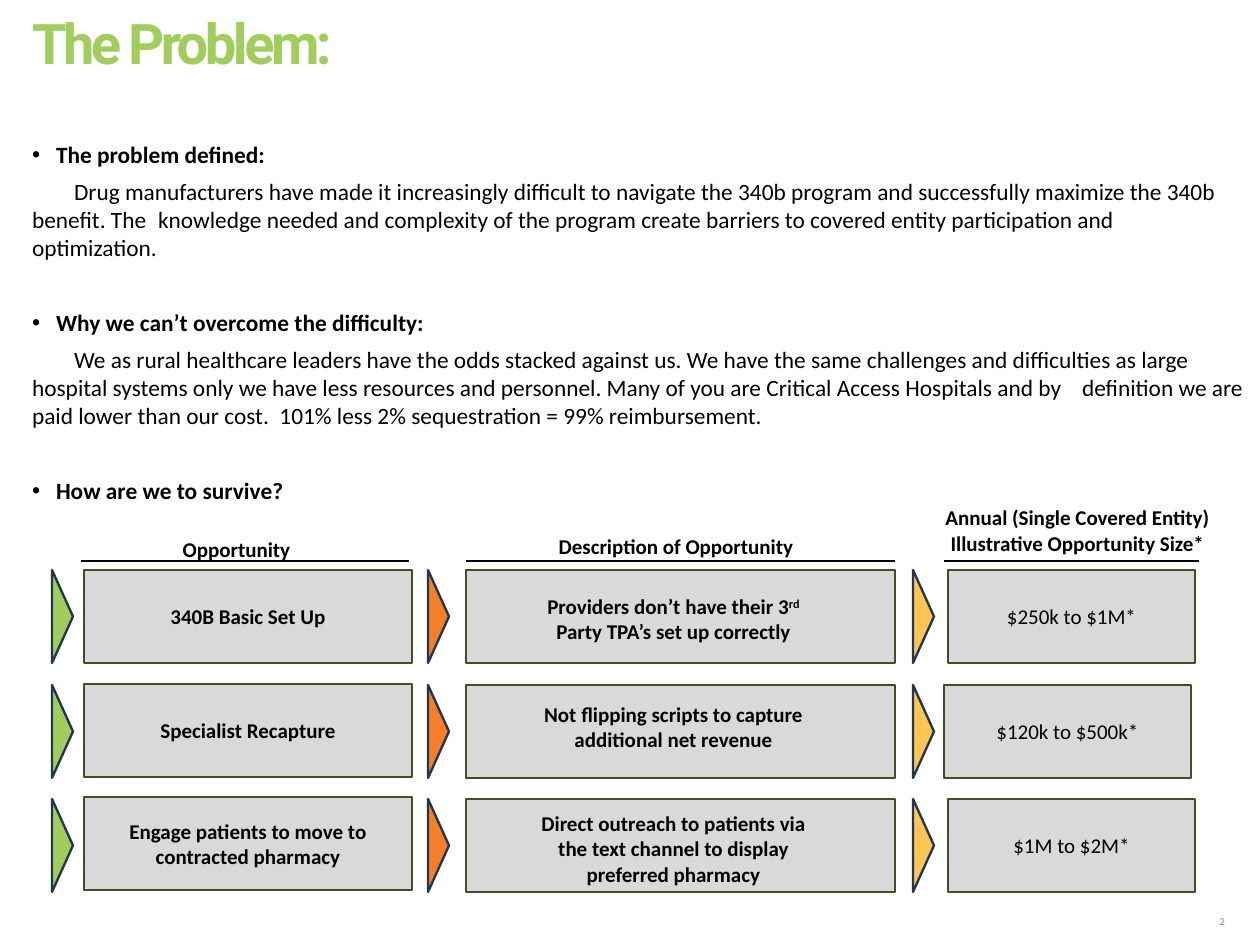
import pptx
import pptx.util
import pptx.dml.color
import pptx.enum.shapes
import pptx.enum.text
import pptx.oxml
import pptx.oxml.ns

SCALE = 914400 / 84
COLORS = {
    "black": "000000", "green": "A0CD5B", "orange": "F57F28", "yellow": "FEC553",
    "navy": "213650", "olive": "414F26", "gray": "D9D9D9", "number": "888888",
}
ALIGN = pptx.enum.text.PP_ALIGN
ANCHOR = pptx.enum.text.MSO_ANCHOR
SHAPES = pptx.enum.shapes.MSO_SHAPE


def px(value):
    return pptx.util.Emu(round(value * SCALE))


def rgb(name):
    return pptx.dml.color.RGBColor.from_string(COLORS[name])


def xml(tag, **attributes):
    element = pptx.oxml.parse_xml(f"<a:{tag} {pptx.oxml.ns.nsdecls('a')}/>")
    for name, value in attributes.items():
        element.set(name, str(value))
    return element


def write(paragraph, text, size=18, font="Calibri", color="black", bold=True,
          align=ALIGN.CENTER, spacing=None, baseline=None):
    paragraph.alignment = align
    run = paragraph.add_run()
    run.text = text
    run.font.size = pptx.util.Pt(size)
    run.font.name = font
    run.font.bold = bold
    run.font.color.rgb = rgb(color)
    for name, value in (("spc", spacing), ("baseline", baseline)):
        if value is not None:
            run.font._element.set(name, str(value))


class SlideBuilder:
    def __init__(self, slide):
        self.slide = slide

    def place(self, shape, box):
        shape.left, shape.top, shape.width, shape.height = map(px, box)

    def frame(self, shape, anchor=ANCHOR.MIDDLE, insets=(4, 4, 4, 4), wrap=True):
        frame = shape.text_frame
        frame.auto_size = pptx.enum.text.MSO_AUTO_SIZE.NONE
        frame.word_wrap = wrap
        frame.vertical_anchor = anchor
        frame.margin_left, frame.margin_top, frame.margin_right, frame.margin_bottom = map(px, insets)
        return frame

    def title(self, text, box):
        shape = self.slide.shapes.title
        self.place(shape, box)
        write(self.frame(shape).paragraphs[0], text, size=48, font="Roboto",
              color="green", align=ALIGN.LEFT, spacing=-300)

    def body(self, sections, box):
        shape = self.slide.placeholders[1]
        self.place(shape, box)
        frame = self.frame(shape, ANCHOR.TOP)
        for index, (heading, detail) in enumerate(sections):
            paragraph = frame.add_paragraph() if index else frame.paragraphs[0]
            self.heading(paragraph, heading, 40 if index else 8)
            if detail:
                self.detail(frame.add_paragraph(), detail)

    def heading(self, paragraph, text, before):
        write(paragraph, text, size=20, align=ALIGN.LEFT)
        paragraph.space_before = pptx.util.Pt(before)
        properties = paragraph._p.get_or_add_pPr()
        properties.set("marL", str(px(24)))
        properties.set("indent", str(-px(24)))
        properties.append(xml("buFont", typeface="Arial"))
        properties.append(xml("buChar", char="•"))

    def detail(self, paragraph, text):
        write(paragraph, text, size=20, bold=False, align=ALIGN.LEFT)
        paragraph.space_before = pptx.util.Pt(8)
        properties = paragraph._p.get_or_add_pPr()
        properties.set("marL", "0")
        properties.set("indent", "0")
        properties.append(xml("buNone"))
        stops = xml("tabLst")
        for number in range(1, 20):
            stops.append(xml("tab", pos=px(63 * number), algn="l"))
        properties.append(stops)

    def label(self, lines, box, wrap=True, anchor=ANCHOR.TOP, **style):
        shape = self.slide.shapes.add_textbox(*map(px, box))
        frame = self.frame(shape, anchor, wrap=wrap)
        for index, line in enumerate(lines):
            write(frame.add_paragraph() if index else frame.paragraphs[0], line, **style)

    def rule(self, left, right, top):
        line = self.slide.shapes.add_connector(
            pptx.enum.shapes.MSO_CONNECTOR.STRAIGHT, px(left), px(top), px(right), px(top))
        line.line.color.rgb = rgb("black")
        line.line.width = pptx.util.Pt(1.5)
        line._element.spPr.append(xml("effectLst"))

    def shape(self, kind, box, fill, outline):
        shape = self.slide.shapes.add_shape(kind, *map(px, box))
        shape.shadow.inherit = False
        shape.fill.solid()
        shape.fill.fore_color.rgb = rgb(fill)
        shape.line.color.rgb = rgb(outline)
        shape.line.width = pptx.util.Pt(2)
        return shape

    def arrow(self, center, middle, color):
        shape = self.shape(SHAPES.ISOSCELES_TRIANGLE, (center - 46, middle - 10, 93, 21), color, "navy")
        shape.rotation = 90

    def card(self, runs, box, insets, bold=True):
        shape = self.shape(SHAPES.RECTANGLE, box, "gray", "olive")
        paragraph = self.frame(shape, insets=insets).paragraphs[0]
        for text, baseline in runs:
            write(paragraph, text, bold=bold, baseline=baseline)


SECTIONS = [
    ("The problem defined:",
     "\tDrug manufacturers have made it increasingly difficult to navigate the 340b program and "
     "successfully maximize the 340b \tbenefit. The \tknowledge needed and complexity of the program "
     "create barriers to covered entity participation and \toptimization."),
    ("Why we can’t overcome the difficulty:",
     "\tWe as rural healthcare leaders have the odds stacked against us. We have the same challenges "
     "and difficulties as large \thospital systems only we have less resources and personnel. Many of "
     "you are Critical Access Hospitals and by \tdefinition we are paid lower than our cost.  "
     "101% less 2% sequestration = 99% reimbursement."),
    ("How are we to survive?", None),
]
HEADERS = [
    (["Opportunity"], (165, 533, 143, 34), (81, 409)),
    (["Description of Opportunity"], (496, 530, 360, 34), (466, 895)),
    (["Annual (Single Covered Entity)", "Illustrative Opportunity Size*"], (926, 501, 303, 60), (944, 1199)),
]
ARROWS = [(62, "green"), (438, "orange"), (923, "yellow")]
ROWS = [
    (570, 570, 948, "340B Basic Set Up",
     [("Providers don’t have their 3", None), ("rd", 30000), (" Party TPA’s set up correctly", None)],
     (5, 0), "$250k to $1M*"),
    (685, 684, 944, "Specialist Recapture",
     [("Not flipping scripts to capture additional net revenue", None)],
     (0, 10), "$120k to $500k*"),
    (799, 797, 948, "Engage patients to move to contracted pharmacy",
     [("Direct outreach to patients via the text channel to display preferred pharmacy", None)],
     (6, 0), "$1M to $2M*"),
]


def main():
    presentation = pptx.Presentation()
    presentation.slide_width, presentation.slide_height = px(1260), px(945)
    builder = SlideBuilder(presentation.slides.add_slide(presentation.slide_layouts[1]))
    builder.title("The Problem:", (28, -10, 1126, 105))
    builder.body(SECTIONS, (28, 136, 1221, 444))
    for lines, box, (left, right) in HEADERS:
        builder.label(lines, box)
        builder.rule(left, right, 561)
    for top, opportunity_top, size_left, opportunity, description, (above, below), size in ROWS:
        for center, color in ARROWS:
            builder.arrow(center, top + 46, color)
        builder.card([(opportunity, None)], (84, opportunity_top, 328, 93), (17, 4, 17, 4))
        builder.card(description, (466, top, 429, 93), (61, above, 75, below))
        builder.card([(size, None)], (size_left, top, 247, 93), (10, 4, 10, 4), bold=False)
    builder.label(["2"], (1214, 911, 15, 21), wrap=False, anchor=ANCHOR.MIDDLE,
                  size=9, color="number", bold=False, align=ALIGN.RIGHT)
    presentation.save("out.pptx")


if __name__ == "__main__":
    main()
